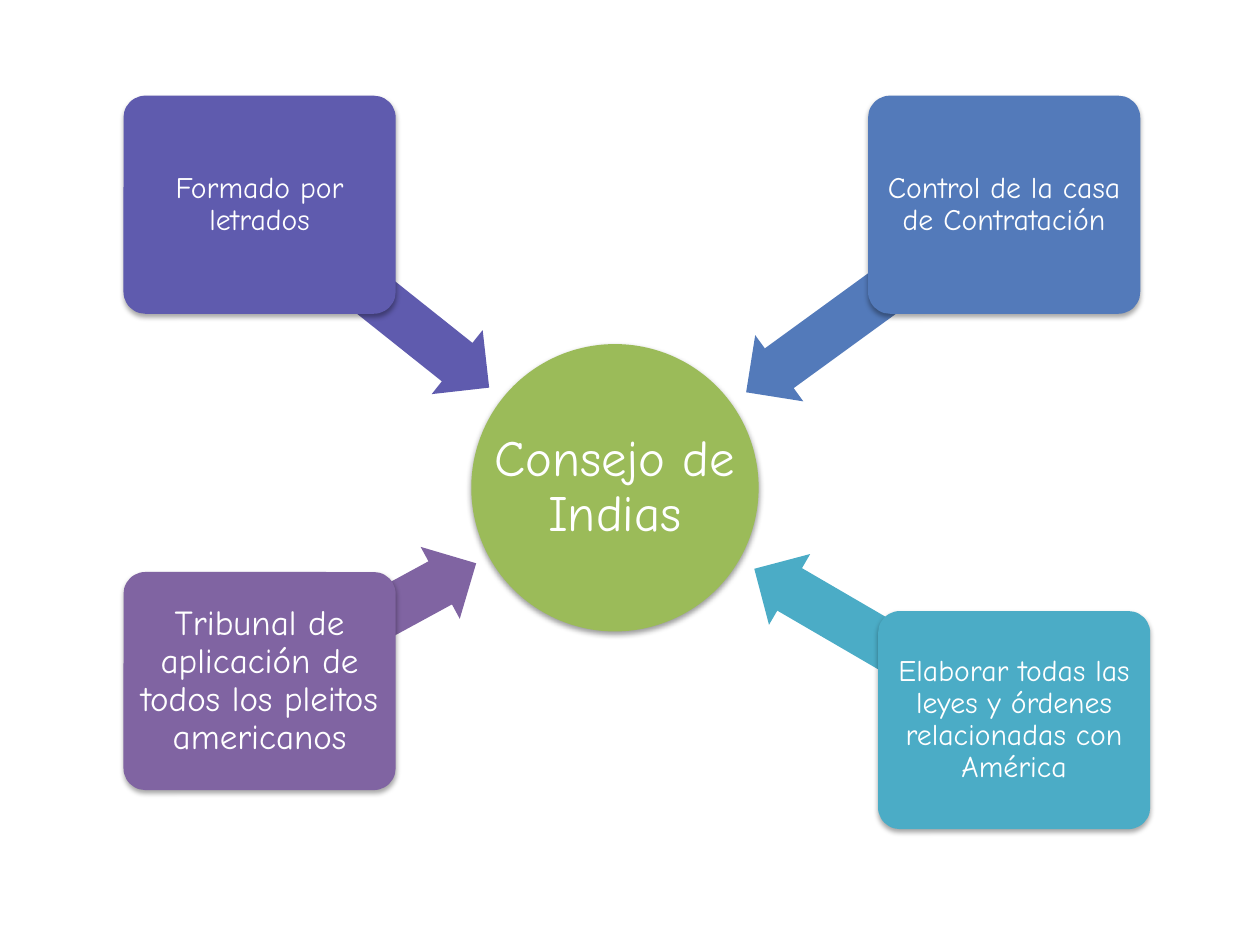
from math import atan2, degrees, hypot

from lxml import etree
from pptx import Presentation
from pptx.dml.color import RGBColor
from pptx.enum import shapes, text
from pptx.oxml.ns import qn
from pptx.util import Pt

FONT = "Comic Neue"
WHITE = "FFFFFF"
CARD_WIDTH, CARD_HEIGHT = 155.5, 124.6
ARROW_THICKNESS = 46.8
ARROW_REACH = 0.945  # share of the way from card centre to circle edge
HUB_BOX = (269.3, 196.6, 164.2, 164.2)

CARDS = [  # left, top, colour, size, wording
    (70.6, 326.9, "8064A2", 20,
     "Tribunal de aplicación de todos los pleitos americanos"),
    (70.6, 54.7, "5F5BAE", 17, "Formado por letrados"),
    (496.1, 54.7, "537ABA", 17, "Control de la casa de Contratación"),
    (501.8, 349.2, "4BACC6", 17,
     "Elaborar todas las leyes y órdenes relacionadas con América"),
]


def rgb(colour):
    return RGBColor.from_string(colour)


def centre(box):
    left, top, width, height = box
    return left + width / 2, top + height / 2


def add_filled(slide, kind, box, colour):
    shape = slide.shapes.add_shape(kind, *map(Pt, box))
    shape.shadow.inherit = False
    shape.fill.solid()
    shape.fill.fore_color.rgb = rgb(colour)
    shape.line.fill.background()
    return shape


def add_drop_shadow(shape, opacity, distance):
    """Cast a soft black shadow straight down; opacity in percent."""
    effects = shape._element.spPr.find(qn("a:effectLst"))
    shadow = etree.SubElement(
        effects, qn("a:outerShdw"), blurRad=str(Pt(3.1)),
        dist=str(Pt(distance)), dir="5400000", rotWithShape="0")
    black = etree.SubElement(shadow, qn("a:srgbClr"), val="000000")
    etree.SubElement(black, qn("a:alpha"), val=str(opacity * 1000))


def write_label(shape, wording, size, inset):
    frame = shape.text_frame
    frame.word_wrap = True
    frame.vertical_anchor = text.MSO_ANCHOR.MIDDLE
    frame.margin_left = frame.margin_right = Pt(inset)
    frame.margin_top = frame.margin_bottom = Pt(inset)
    label = frame.paragraphs[0]
    label.text = wording
    label.alignment = text.PP_ALIGN.CENTER
    label.line_spacing = 0.9
    label.font.name = FONT
    label.font.size = Pt(size)
    label.font.color.rgb = rgb(WHITE)


def add_hub(slide, box):
    circle = add_filled(slide, shapes.MSO_SHAPE.OVAL, box, "9BBB59")
    add_drop_shadow(circle, 38, 1.6)
    # The wording is wider than the text area inside an oval
    title = slide.shapes.add_textbox(*map(Pt, box))
    write_label(title, "Consejo de Indias", 29, 1.4)


def add_arrow(slide, card_box, hub_box, colour):
    """Point from the card's centre towards the hub, short of its edge."""
    (x, y), (hub_x, hub_y) = centre(card_box), centre(hub_box)
    dx, dy = hub_x - x, hub_y - y
    distance = hypot(dx, dy)
    length = ARROW_REACH * (distance - hub_box[2] / 2)
    middle_x = x + dx / distance * length / 2
    middle_y = y + dy / distance * length / 2
    box = (middle_x - length / 2, middle_y - ARROW_THICKNESS / 2,
           length, ARROW_THICKNESS)
    arrow = add_filled(slide, shapes.MSO_SHAPE.LEFT_ARROW, box, colour)
    arrow.adjustments[0] = 0.6
    arrow.adjustments[1] = 0.5
    arrow.rotation = degrees(atan2(dy, dx)) + 180


def add_card(slide, box, colour, size, wording):
    card = add_filled(slide, shapes.MSO_SHAPE.ROUNDED_RECTANGLE, box, colour)
    card.adjustments[0] = 0.1
    add_drop_shadow(card, 35, 1.8)
    write_label(card, wording, size, 2.9)


def main():
    deck = Presentation()
    deck.slide_width, deck.slide_height = Pt(720), Pt(540)
    slide = deck.slides.add_slide(deck.slide_layouts[6])
    add_hub(slide, HUB_BOX)
    for left, top, colour, size, wording in CARDS:
        box = (left, top, CARD_WIDTH, CARD_HEIGHT)
        add_arrow(slide, box, HUB_BOX, colour)
        add_card(slide, box, colour, size, wording)
    deck.save("out.pptx")


if __name__ == "__main__":
    main()
